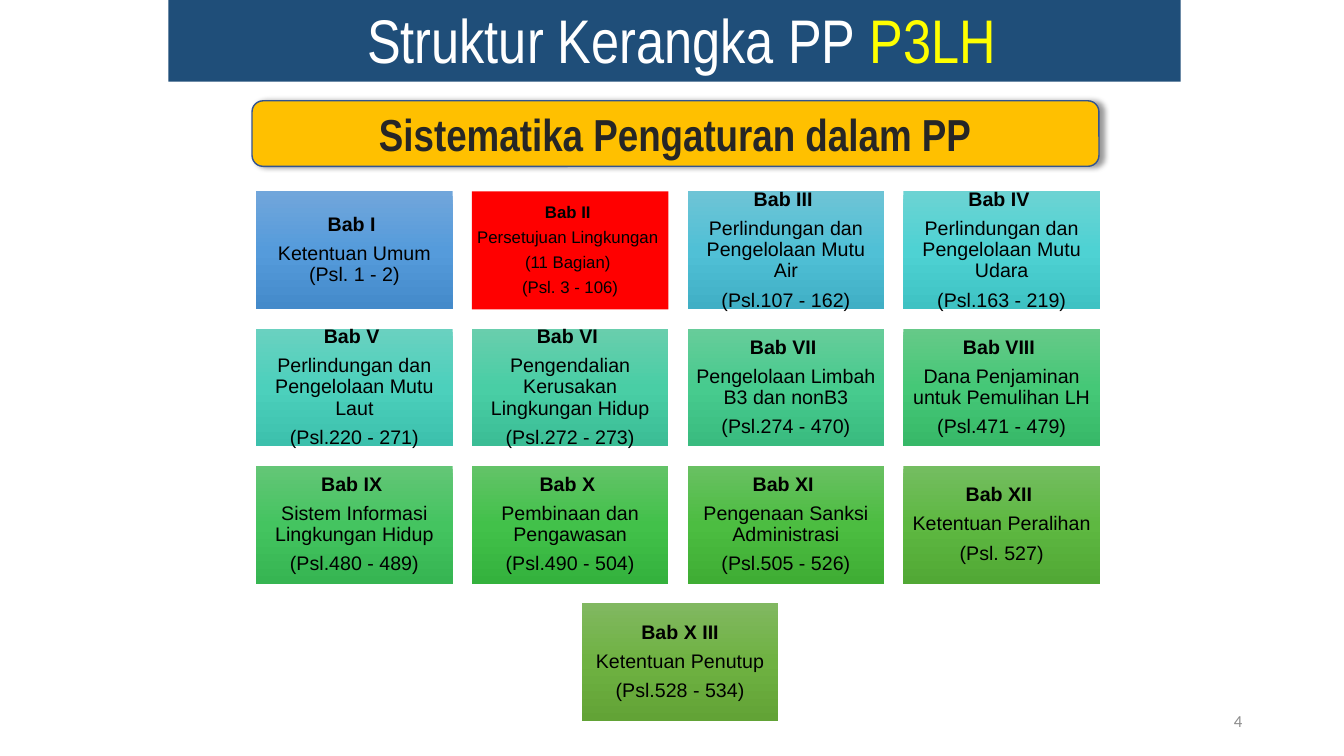
from lxml.etree import SubElement
from pptx import Presentation
from pptx.dml.color import RGBColor
from pptx.enum.shapes import MSO_SHAPE
from pptx.enum.text import MSO_ANCHOR, MSO_AUTO_SIZE, PP_ALIGN
from pptx.oxml import parse_xml
from pptx.oxml.ns import nsdecls, qn
from pptx.util import Inches, Pt

COLORS = {
    "navy": "1F4E79", "white": "FFFFFF", "yellow": "FFFF00", "gold": "FFC000",
    "border": "325491", "dark": "262626", "black": "000000", "gray": "8C8C8C",
    "red": "FF0000",
}

LEFT, TOP = 2.54, 1.9
WIDTH, HEIGHT = 1.95, 1.17
COLUMN_STEP, ROW_STEP = 2.14, 1.36
COLUMNS = 4

chapters = [
    ("Bab I ", ["Ketentuan Umum (Psl. 1 - 2)"], ["71A6DB", "559BDB", "448ACA"]),
    ("Bab II ", ["Persetujuan Lingkungan ", "(11 Bagian) ", "(Psl. 3 - 106)"], None),
    ("Bab III ", ["Perlindungan dan Pengelolaan Mutu Air", "(Psl.107 - 162)"], ["6EC4D6", "50C0D6", "40AFC5"]),
    ("Bab IV ", ["Perlindungan dan Pengelolaan Mutu Udara", "(Psl.163 - 219)"], ["6CD3D3", "4ED2D3", "3EC2C3"]),
    ("Bab V ", ["Perlindungan dan Pengelolaan Mutu Laut", "(Psl.220 - 271)"], ["6AD1C0", "4CD0BC", "3CC0AC"]),
    ("Bab VI ", ["Pengendalian Kerusakan Lingkungan Hidup", "(Psl.272 - 273)"], ["69CEAD", "49CEA5", "3BBD95"]),
    ("Bab VII ", ["Pengelolaan Limbah B3 dan nonB3", "(Psl.274 - 470)"], ["67CC9A", "47CB8E", "39BB7F"]),
    ("Bab VIII ", ["Dana Penjaminan untuk Pemulihan LH", "(Psl.471 - 479)"], ["66C988", "45C877", "37B868"]),
    ("Bab IX ", ["Sistem Informasi Lingkungan Hidup", "(Psl.480 - 489)"], ["64C677", "44C460", "36B552"]),
    ("Bab X ", ["Pembinaan dan Pengawasan", "(Psl.490 - 504)"], ["63C368", "42C14A", "34B23D"]),
    ("Bab XI ", ["Pengenaan Sanksi Administrasi", "(Psl.505 - 526)"], ["69C062", "4CBD41", "3FAD34"]),
    ("Bab XII ", ["Ketentuan Peralihan", "(Psl. 527)"], ["74BD61", "5EB841", "51A835"]),
    ("Bab X III", ["Ketentuan Penutup", "(Psl.528 - 534)"], ["81B861", "6FB242", "62A336"]),
]


def add_box(preset, left, top, width, height, color):
    shape = slide.shapes.add_shape(preset, Inches(left), Inches(top), Inches(width), Inches(height))
    shape.shadow.inherit = False
    shape.fill.solid()
    shape.fill.fore_color.rgb = RGBColor.from_string(COLORS[color])
    shape.line.fill.background()
    shape.text_frame.word_wrap = True
    shape.text_frame.vertical_anchor = MSO_ANCHOR.MIDDLE
    return shape


def add_run(paragraph, text, font, size, color, bold=False, align=PP_ALIGN.CENTER):
    paragraph.alignment = align
    run = paragraph.add_run()
    run.text = text
    run.font.name = font
    run.font.size = Pt(size)
    run.font.bold = bold
    run.font.color.rgb = RGBColor.from_string(COLORS[color])
    return run


presentation = Presentation()
presentation.slide_width = Inches(13.33)
presentation.slide_height = Inches(7.5)
slide = presentation.slides.add_slide(presentation.slide_layouts[6])

title = add_box(MSO_SHAPE.RECTANGLE, 1.67, -0.03, 10.04, 0.84, "navy")
title.text_frame.vertical_anchor = MSO_ANCHOR.TOP
title.text_frame.auto_size = MSO_AUTO_SIZE.SHAPE_TO_FIT_TEXT
title_paragraph = title.text_frame.paragraphs[0]
add_run(title_paragraph, " Struktur Kerangka PP ", "Arial Narrow", 44, "white")
add_run(title_paragraph, "P3LH", "Arial Narrow", 44, "yellow")

banner = add_box(MSO_SHAPE.ROUNDED_RECTANGLE, 2.5, 1, 8.4, 0.65, "gold")
banner.line.color.rgb = RGBColor.from_string(COLORS["border"])
banner.line.width = Pt(1)
effects = banner._element.spPr.find(qn("a:effectLst"))
shadow = SubElement(effects, qn("a:outerShdw"), blurRad=str(Pt(4)), dist=str(Pt(3)), dir="0", algn="l", rotWithShape="0")
shadow_color = SubElement(shadow, qn("a:srgbClr"), val=COLORS["black"])
SubElement(shadow_color, qn("a:alpha"), val="40000")
banner_run = add_run(banner.text_frame.paragraphs[0], "Sistematika Pengaturan dalam PP",
                     "Arial Narrow", 32, "dark", bold=True)
banner_run.font._element.insert(0, parse_xml(
    f'<a:ln {nsdecls("a")} w="{Pt(1.06)}"><a:solidFill><a:srgbClr val="{COLORS["white"]}"/></a:solidFill></a:ln>'))

page_number = slide.shapes.add_textbox(Inches(9.42), Inches(6.95), Inches(3), Inches(0.4))
page_number.text_frame.word_wrap = True
page_number.text_frame.vertical_anchor = MSO_ANCHOR.MIDDLE
add_run(page_number.text_frame.paragraphs[0], "4", "Calibri", 12, "gray", align=PP_ALIGN.RIGHT)

for index, (heading, details, gradient) in enumerate(chapters):
    row, column = divmod(index, COLUMNS)
    is_last = index == len(chapters) - 1
    left = 5.77 if is_last else LEFT + column * COLUMN_STEP
    card = add_box(MSO_SHAPE.RECTANGLE, left, TOP + row * ROW_STEP, WIDTH, HEIGHT, "red")
    size, inset = (14, 0.06) if gradient else (12, 0.05)
    if gradient:
        card.fill.gradient()
        card.fill.gradient_angle = 270
        stops = card._element.spPr.find(qn("a:gradFill")).find(qn("a:gsLst"))
        stops.clear()
        for position, color in zip((0, 50000, 100000), gradient):
            stop = SubElement(stops, qn("a:gs"), pos=str(position))
            SubElement(stop, qn("a:srgbClr"), val=color)

    frame = card.text_frame
    frame.margin_left = frame.margin_right = Inches(inset)
    frame.margin_top = frame.margin_bottom = Inches(inset)
    for line_index, text in enumerate([heading, *details]):
        paragraph = frame.add_paragraph() if line_index else frame.paragraphs[0]
        paragraph.line_spacing = 0.9
        paragraph.space_after = Pt(size * 0.4)
        add_run(paragraph, text, "Arial", size, "black", bold=line_index == 0)

presentation.save("out.pptx")
